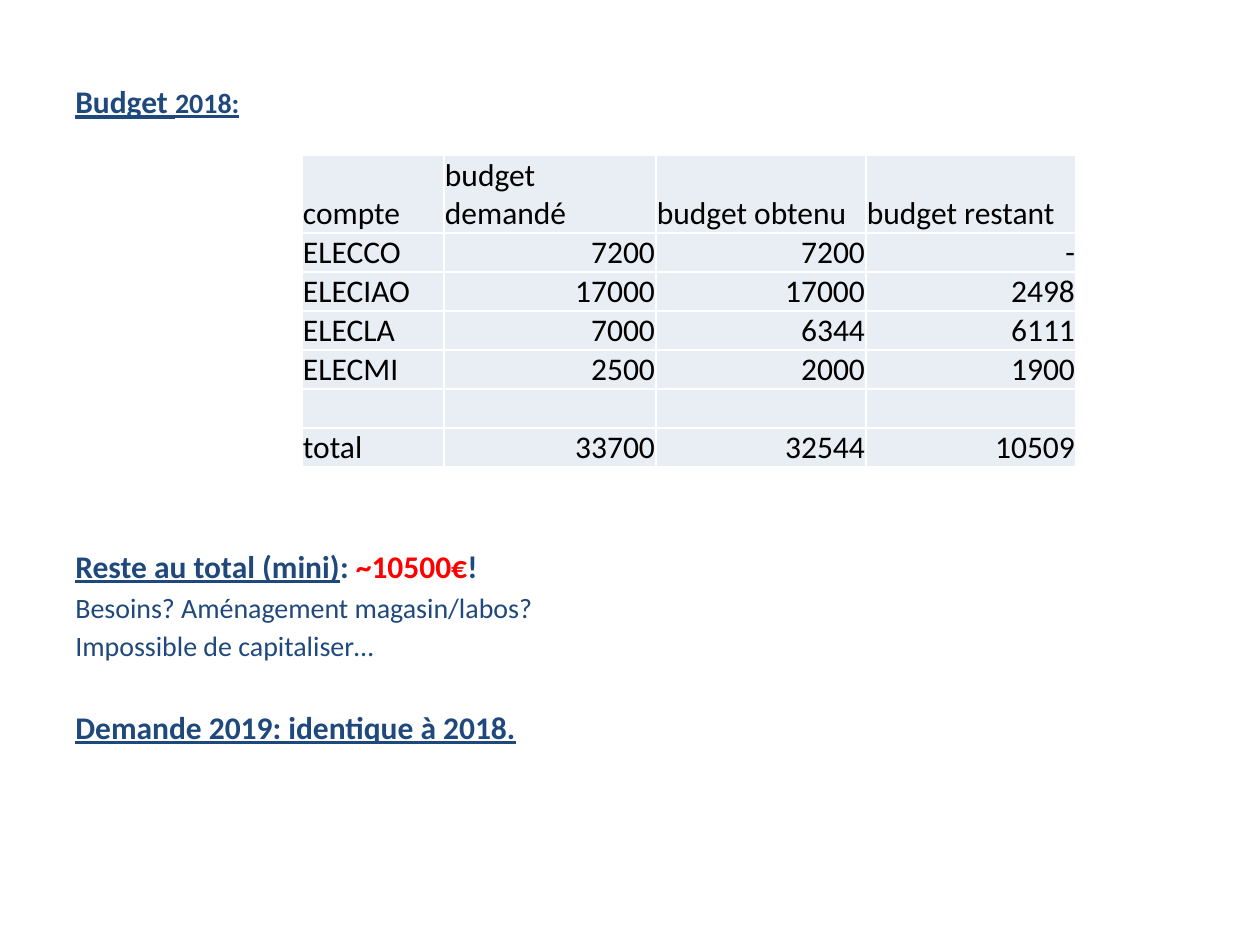
from lxml.etree import SubElement
from pptx import Presentation
from pptx.dml.color import RGBColor
from pptx.enum.text import MSO_ANCHOR, PP_ALIGN
from pptx.oxml import parse_xml
from pptx.oxml.ns import nsdecls, qn
from pptx.util import Pt

PX = 914400 / 126
NAVY = RGBColor(0x1F, 0x49, 0x7D)
RED = RGBColor(0xFF, 0x00, 0x00)
BLACK = RGBColor(0x00, 0x00, 0x00)
WHITE = RGBColor(0xFF, 0xFF, 0xFF)
PALE = RGBColor(0xE9, 0xED, 0xF4)

HEAD = dict(size=Pt(18), bold=True, underline=True)
SMALL = dict(HEAD, size=Pt(16))
MARK = dict(size=Pt(18), bold=True)
PLAIN = dict(size=Pt(16))

# Space before in points, then the runs of each paragraph
NOTES = [
    (0, [("Budget ", HEAD, NAVY), ("2018:", SMALL, NAVY)]),
    (244, [("Reste au total (mini)", HEAD, NAVY), (": ", MARK, NAVY),
           ("~10500€", MARK, RED), ("!", MARK, NAVY)]),
    (3, [("Besoins? Aménagement magasin/labos?", PLAIN, NAVY)]),
    (3, [("Impossible de capitaliser…", PLAIN, NAVY)]),
    (26, [("Demande 2019: identique à 2018.", HEAD, NAVY)]),
]

ROWS = [
    ("compte", "budget demandé", "budget obtenu", "budget restant"),
    ("ELECCO", "7200", "7200", "-"),
    ("ELECIAO", "17000", "17000", "2498"),
    ("ELECLA", "7000", "6344", "6111"),
    ("ELECMI", "2500", "2000", "1900"),
    ("", "", "", ""),
    ("total", "33700", "32544", "10509"),
]
WIDTHS = (142, 212, 210, 210)
HEIGHTS = (78,) + (39,) * 6


def px(n):
    return round(n * PX)


def add_run(para, text, form, color):
    run = para.add_run()
    run.text = text
    run.font.name = "Calibri"
    run.font.color.rgb = color
    for key, value in form.items():
        setattr(run.font, key, value)


def add_notes(slide, box):
    frame = slide.shapes.add_textbox(*map(px, box)).text_frame
    frame.word_wrap = True
    for i, (space, runs) in enumerate(NOTES):
        para = frame.add_paragraph() if i else frame.paragraphs[0]
        para.space_before = Pt(space)
        for text, form, color in runs:
            add_run(para, text, form, color)


def add_edges(cell):
    props = cell._tc.get_or_add_tcPr()
    for i, side in enumerate("LRTB"):
        line = parse_xml(f'<a:ln{side} {nsdecls("a")} w="{Pt(1)}"/>')
        fill = SubElement(line, qn("a:solidFill"))
        SubElement(fill, qn("a:srgbClr")).set("val", str(WHITE))
        props.insert(i, line)


def add_budget(slide, left, top):
    size = map(px, (left, top, sum(WIDTHS), sum(HEIGHTS)))
    table = slide.shapes.add_table(len(ROWS), len(WIDTHS), *size).table
    table.first_row = table.horz_banding = False
    for col, width in zip(table.columns, WIDTHS):
        col.width = px(width)
    for row, height in zip(table.rows, HEIGHTS):
        row.height = px(height)

    form = dict(margin_left=px(1), margin_right=px(1), margin_top=px(1),
                margin_bottom=0, vertical_anchor=MSO_ANCHOR.BOTTOM)
    for r, texts in enumerate(ROWS):
        for c, text in enumerate(texts):
            cell = table.cell(r, c)
            for key, value in form.items():
                setattr(cell, key, value)
            cell.fill.solid()
            cell.fill.fore_color.rgb = PALE
            add_edges(cell)
            if text:
                para = cell.text_frame.paragraphs[0]
                if r and c:
                    para.alignment = PP_ALIGN.RIGHT
                add_run(para, text, dict(size=Pt(18)), BLACK)


def main():
    deck = Presentation()
    deck.slide_width, deck.slide_height = px(1260), px(945)
    slide = deck.slides.add_slide(deck.slide_layouts[6])
    add_notes(slide, (63, 76, 1134, 814))
    add_budget(slide, 302, 155)
    deck.save("out.pptx")


if __name__ == "__main__":
    main()
